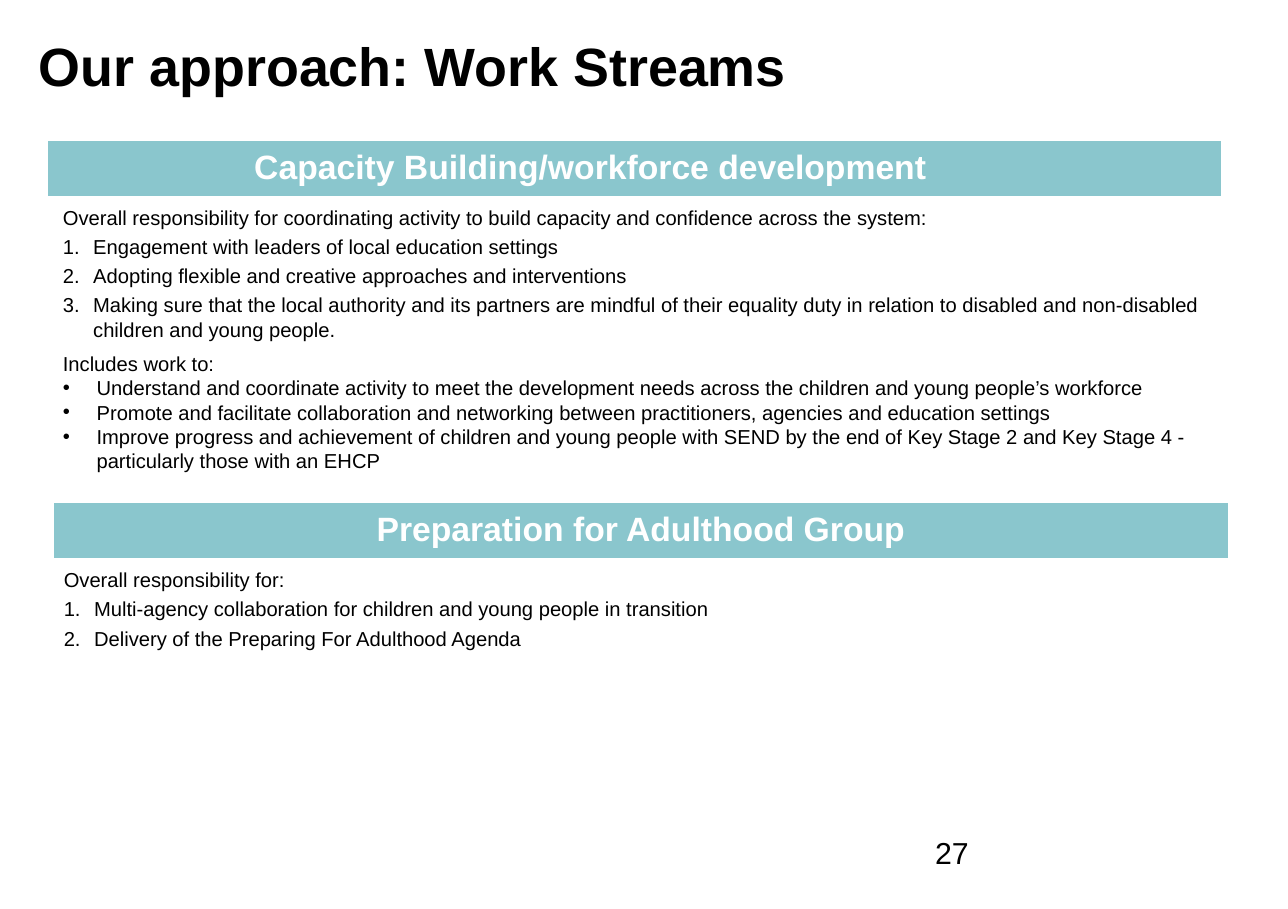
from lxml import etree
from pptx import Presentation
from pptx.dml.color import RGBColor
from pptx.enum.shapes import MSO_SHAPE
from pptx.enum.text import MSO_ANCHOR, MSO_AUTO_SIZE, PP_ALIGN
from pptx.oxml.ns import qn
from pptx.util import Pt

RECTANGLE = MSO_SHAPE.RECTANGLE
MIDDLE, TOP = MSO_ANCHOR.MIDDLE, MSO_ANCHOR.TOP
LEFT, CENTER = PP_ALIGN.LEFT, PP_ALIGN.CENTER
NO_FIT = MSO_AUTO_SIZE.NONE

FONT = "Arial"
BLACK, WHITE, TEAL = "000000", "FFFFFF", "8AC6CD"
TWO_CONTENT_LAYOUT = 3

TITLE = "Our approach: Work Streams"
PAGE_NUMBER = "27"

# Each line: (style, text)
STREAMS = [
    {
        "heading": "Capacity Building/workforce development",
        "bar": (27.4, 82.8, 699.1, 34.6),
        "right_inset": 53,
        "body": (30.2, 118.1, 696.2, 167.8),
        "lines": [
            ("lead", "Overall responsibility for coordinating activity to build capacity and confidence across the system:"),
            ("number", "Engagement with leaders of local education settings"),
            ("number", "Adopting flexible and creative approaches and interventions"),
            ("number", "Making sure that the local authority and its partners are mindful of their equality duty in relation to disabled and non-disabled children and young people."),
            ("follow", "Includes work to:"),
            ("bullet", "Understand and coordinate activity to meet the development needs across the children and young people’s workforce"),
            ("bullet", "Promote and facilitate collaboration and networking between practitioners, agencies and education settings"),
            ("bullet", "Improve progress and achievement of children and young people with SEND by the end of Key Stage 2 and Key Stage 4 - particularly those with an EHCP"),
        ],
    },
    {
        "heading": "Preparation for Adulthood Group",
        "bar": (31, 298.1, 699.8, 34.6),
        "right_inset": 1,
        "body": (30.7, 333.4, 690.5, 56.9),
        "lines": [
            ("lead", "Overall responsibility for:"),
            ("number", "Multi-agency collaboration for children and young people in transition"),
            ("number", "Delivery of the Preparing For Adulthood Agenda"),
        ],
    },
]

# Style: (space before, hanging indent, bullet element, its attributes)
STYLES = {
    "lead": (0, 0, "a:buNone", {}),
    "follow": (6, 0, "a:buNone", {}),
    "number": (3, 18, "a:buAutoNum", {"type": "arabicPeriod"}),
    "bullet": (0, 20, "a:buChar", {"char": "•"}),
}


def place(shape, left, top, width, height):
    shape.left, shape.top = Pt(left), Pt(top)
    shape.width, shape.height = Pt(width), Pt(height)


def format_runs(para, size, color, bold=False):
    for span in para.runs:
        span.font.name = FONT
        span.font.size = Pt(size)
        span.font.bold = bold
        span.font.color.rgb = RGBColor.from_string(color)


def add_bar(page, stream):
    bar = page.shapes.add_shape(RECTANGLE, *map(Pt, stream["bar"]))
    bar.shadow.inherit = False
    bar.fill.solid()
    bar.fill.fore_color.rgb = RGBColor.from_string(TEAL)
    bar.line.color.rgb = RGBColor.from_string(WHITE)
    bar.line.width = Pt(2)
    frame = bar.text_frame
    frame.text = stream["heading"]
    frame.vertical_anchor = MIDDLE
    frame.margin_left = frame.margin_top = frame.margin_bottom = Pt(1)
    frame.margin_right = Pt(stream["right_inset"])
    para = frame.paragraphs[0]
    para.alignment = CENTER
    para.line_spacing = 0.9
    format_runs(para, 20, WHITE, bold=True)


def fill_body(body, stream):
    place(body, *stream["body"])
    frame = body.text_frame
    frame.word_wrap = True
    frame.auto_size = NO_FIT
    frame.vertical_anchor = TOP
    frame.text = "\n".join(text for _, text in stream["lines"])
    for para, (style, _) in zip(frame.paragraphs, stream["lines"]):
        before, indent, bullet, attributes = STYLES[style]
        properties = para._p.get_or_add_pPr()
        properties.set("marL", str(Pt(indent)))
        properties.set("indent", str(Pt(-indent)))
        etree.SubElement(properties, qn(bullet), attributes)
        para.space_before = Pt(before)
        format_runs(para, 12, BLACK)


def main():
    deck = Presentation()
    deck.slide_width, deck.slide_height = Pt(765.4), Pt(540)
    page = deck.slides.add_slide(deck.slide_layouts[TWO_CONTENT_LAYOUT])
    title, *bodies = page.placeholders

    place(title, -12.2, 12.2, 765.4, 53.3)
    frame = title.text_frame
    frame.text = TITLE
    frame.word_wrap = True
    frame.auto_size = NO_FIT
    frame.vertical_anchor = MIDDLE
    frame.margin_left = Pt(35.3)
    frame.paragraphs[0].alignment = LEFT
    format_runs(frame.paragraphs[0], 32, BLACK, bold=True)

    for body, stream in zip(bodies, STREAMS):
        add_bar(page, stream)
        fill_body(body, stream)

    number = page.shapes.add_textbox(Pt(548.6), Pt(491.8), Pt(178.6), Pt(37.4))
    number.text_frame.word_wrap = True
    number.text_frame.text = PAGE_NUMBER
    format_runs(number.text_frame.paragraphs[0], 18, BLACK)

    deck.save("out.pptx")


if __name__ == "__main__":
    main()
